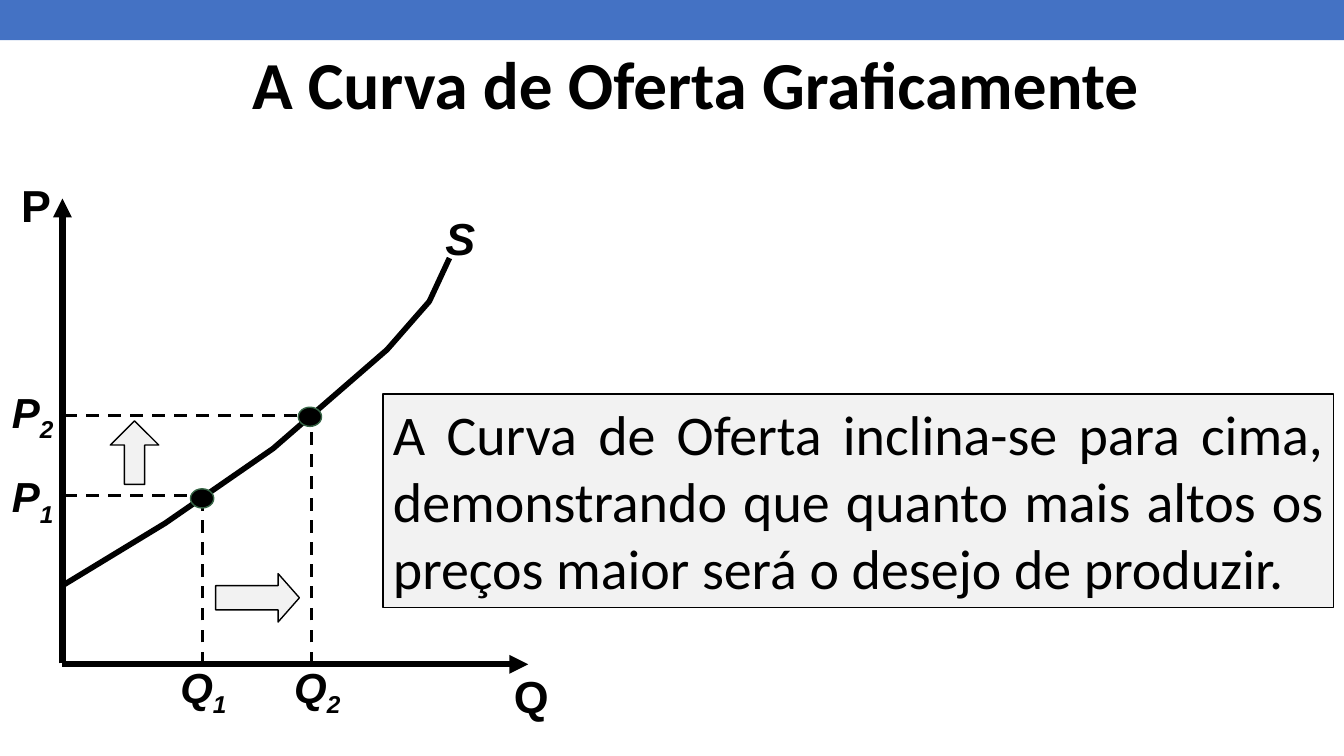
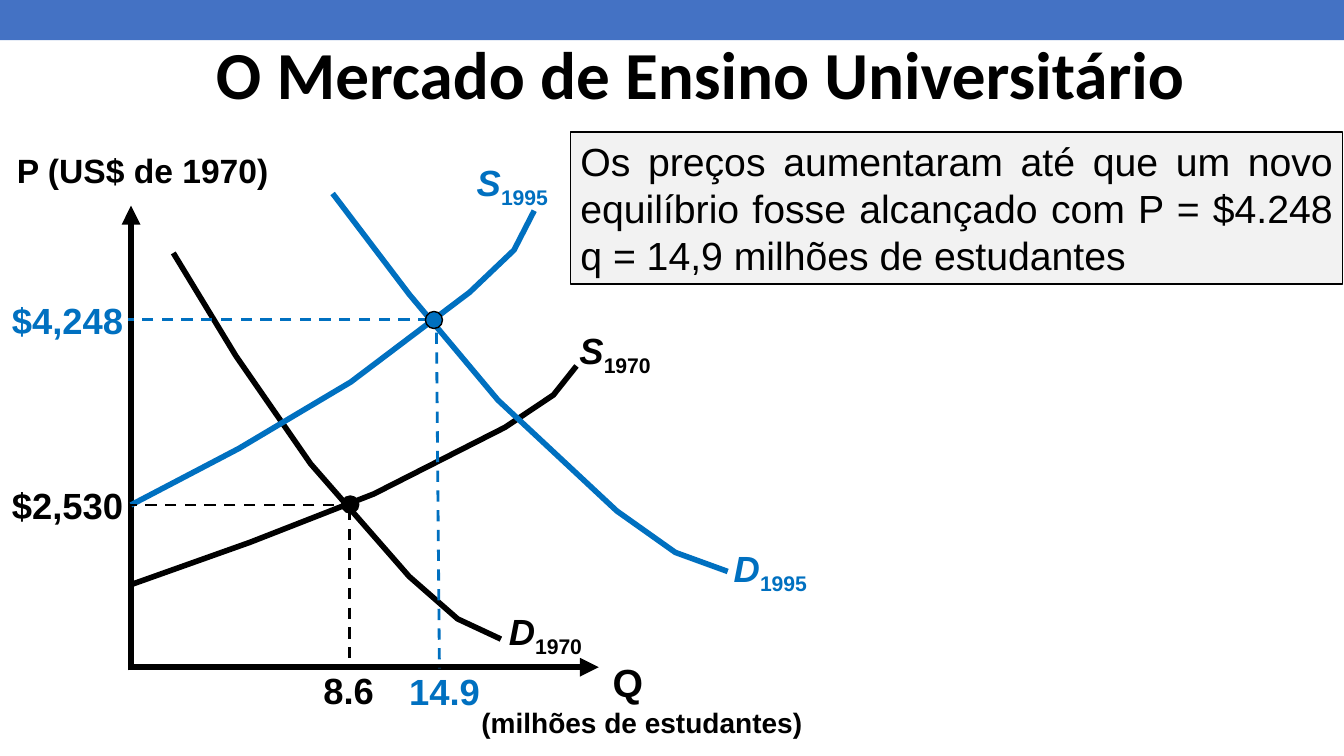
from lxml.etree import SubElement
from pptx import Presentation
from pptx.dml.color import RGBColor
from pptx.enum.dml import MSO_LINE
from pptx.enum.shapes import MSO_CONNECTOR, MSO_SHAPE
from pptx.enum.text import MSO_ANCHOR, MSO_AUTO_SIZE, PP_ALIGN
from pptx.oxml.ns import qn
from pptx.util import Pt

BLACK = RGBColor(0x00, 0x00, 0x00)
BLUE = RGBColor(0x00, 0x70, 0xC0)
BAND_BLUE = RGBColor(0x44, 0x72, 0xC4)
DOT_GREEN = RGBColor(0x37, 0x65, 0x46)
LIGHT_GRAY = RGBColor(0xF2, 0xF2, 0xF2)

SLIDE_WIDTH, SLIDE_HEIGHT = 960, 540


# Text
def add_run(paragraph, text, size, color=BLACK, font="Arial", bold=True,
            italic=False, subscript=False):
    run = paragraph.add_run()
    run.text = text
    run.font.name = font
    run.font.size = Pt(size)
    run.font.bold = bold
    run.font.italic = italic
    run.font.color.rgb = color
    if subscript:
        run.font._element.set("baseline", "-25000")


def add_text_box(slide, left, top, width, height, wrap=False):
    shape = slide.shapes.add_textbox(Pt(left), Pt(top), Pt(width), Pt(height))
    shape.text_frame.word_wrap = wrap
    return shape.text_frame


def add_label(slide, text, left, top, width, size, color=BLACK,
              subscript="", italic_subscript=False):
    """A bold label; a label with a subscript has an italic letter."""
    frame = add_text_box(slide, left, top, width, size * 1.15 + 7.2)
    frame.auto_size = MSO_AUTO_SIZE.SHAPE_TO_FIT_TEXT
    paragraph = frame.paragraphs[0]
    add_run(paragraph, text, size, color, italic=bool(subscript))
    if subscript:
        add_run(paragraph, subscript, size, color,
                italic=italic_subscript, subscript=True)


# Shapes and lines
def add_shape(slide, kind, left, top, width, height, fill, line=None):
    shape = slide.shapes.add_shape(kind, Pt(left), Pt(top), Pt(width), Pt(height))
    shape.shadow.inherit = False
    shape.fill.solid()
    shape.fill.fore_color.rgb = fill
    if line is None:
        shape.line.fill.background()
    else:
        shape.line.color.rgb = line
        shape.line.width = Pt(1)
    return shape


def add_line(slide, start, end, width, color=BLACK, dashed=False, arrow=False):
    connector = slide.shapes.add_connector(
        MSO_CONNECTOR.STRAIGHT, *(Pt(value) for value in (*start, *end)))
    connector.line.color.rgb = color
    connector.line.width = Pt(width)
    if dashed:
        connector.line.dash_style = MSO_LINE.DASH
    properties = connector._element.spPr
    if arrow:
        SubElement(properties.find(qn("a:ln")), qn("a:tailEnd"), type="triangle")
    SubElement(properties, qn("a:effectLst"))


def add_curve(slide, points, color=BLACK):
    start, *others = [(Pt(x), Pt(y)) for x, y in points]
    builder = slide.shapes.build_freeform(*start)
    builder.add_line_segments(others, close=False)
    curve = builder.convert_to_shape()
    curve.shadow.inherit = False
    curve.fill.background()
    curve.line.color.rgb = color
    curve.line.width = Pt(4)


def add_axes(slide, vertical, horizontal):
    for start, end in (vertical, horizontal):
        add_line(slide, start, end, 4.5, arrow=True)


def add_equilibrium(slide, guides, dot, dot_size, guide_width,
                    color=BLACK, outline=BLACK):
    """Dashed guides to both axes, with a dot where they meet."""
    for start, end in guides:
        add_line(slide, start, end, guide_width, color, dashed=True)
    (x, y), (width, height) = dot, dot_size
    add_shape(slide, MSO_SHAPE.OVAL, x - width / 2, y - height / 2,
              width, height, color, outline)


def add_arrow(slide, kind, left, top, width, height, adjustments):
    arrow = add_shape(slide, kind, left, top, width, height, LIGHT_GRAY, BLACK)
    for index, value in enumerate(adjustments):
        arrow.adjustments[index] = value


def add_note(slide, lines, left, top, width, height, size, font):
    note = add_shape(slide, MSO_SHAPE.RECTANGLE, left, top, width, height,
                     LIGHT_GRAY, BLACK)
    frame = note.text_frame
    frame.word_wrap = True
    frame.vertical_anchor = MSO_ANCHOR.TOP
    paragraph = frame.paragraphs[0]
    paragraph.alignment = PP_ALIGN.JUSTIFY
    for index, line in enumerate(lines):
        if index:
            paragraph.add_line_break()
        add_run(paragraph, line, size, font=font, bold=False)


# Frame shared by the slides
def add_slide(presentation, title, center, top):
    slide = presentation.slides.add_slide(presentation.slide_layouts[6])
    add_shape(slide, MSO_SHAPE.RECTANGLE, 0, 0, SLIDE_WIDTH, 28.8, BAND_BLUE)
    width = 760
    frame = add_text_box(slide, center - width / 2, top, width, 63, wrap=True)
    frame.vertical_anchor = MSO_ANCHOR.BOTTOM
    paragraph = frame.paragraphs[0]
    paragraph.alignment = PP_ALIGN.CENTER
    add_run(paragraph, title, 48, font="Calibri")
    return slide


def build_supply_curve(presentation):
    slide = add_slide(presentation, "A Curva de Oferta Graficamente", 496.8, 28.5)

    # Supply curve and explanation
    add_curve(slide, [(44.6, 418.3), (118.1, 373.7), (195.1, 320.4),
                      (276.5, 249.8), (306.7, 215.3), (321.1, 184.3)])
    frame = add_text_box(slide, 311, 147, 36, 46)
    add_run(frame.paragraphs[0], "S", 32, italic=True)
    add_note(slide, ["A Curva de Oferta inclina-se para cima, demonstrando que "
                     "quanto mais altos os preços maior será o desejo de produzir."],
             273.6, 281.5, 679, 152.6, 40, "Calibri")

    # Axes
    bottom, left = 474.5, 46.1
    add_axes(slide, ((44.6, 473.8), (44.6, 141.8)),
             ((44.6, bottom), (377.3, bottom)))
    add_label(slide, "Q", 360, 473.8, 47.5, 32)
    add_label(slide, "P", 8, 123.5, 36, 32)

    # Two points on the curve
    for number, x, y, right, top, dot, price_top, quantity_left in (
            ("1", 144.7, 354.2, 149.8, 356.4, (144.4, 356), 332.6, 121.7),
            ("2", 222.5, 296.6, 226, 294.5, (221.4, 297.7), 272.2, 203)):
        guides = [((left, y), (right, y)), ((x, bottom), (x, top))]
        add_equilibrium(slide, guides, dot, (16.6, 13.7), 2.25, outline=DOT_GREEN)
        add_label(slide, "P", 1.4, price_top, 46, 30,
                  subscript=number, italic_subscript=True)
        add_label(slide, "Q", quantity_left, 468.7, 49, 30,
                  subscript=number, italic_subscript=True)

    # Direction of the change
    add_arrow(slide, MSO_SHAPE.RIGHT_ARROW, 154.1, 409.7, 59.8, 34.6, (0.5, 0.44))
    add_arrow(slide, MSO_SHAPE.UP_ARROW, 78.8, 300.6, 34.6, 45.4, (0.42, 0.5))


def build_university_market(presentation):
    slide = add_slide(presentation, "O Mercado de Ensino Universitário", 500.4, 21.5)

    # Axes and their titles
    add_axes(slide, ((93.6, 478.8), (93.6, 146.9)),
             ((95, 476.6), (427.7, 476.6)))
    frame = add_text_box(slide, 316.8, 466.6, 263.5, 65.5, wrap=True)
    quantity, unit = frame.paragraphs[0], frame.add_paragraph()
    quantity.alignment, unit.alignment = PP_ALIGN.CENTER, PP_ALIGN.RIGHT
    add_run(quantity, "Q", 28)
    add_run(unit, "(milhões de estudantes)", 20)
    add_label(slide, "P (US$ de 1970)", 5, 103.7, 194, 24)

    # Demand and supply curves
    for letter, year, color, label_left, label_top, points in (
            ("D", "1970", BLACK, 356.4, 431.3,
             [(123.8, 180.7), (168.5, 254.2), (221.8, 331.2),
              (292.3, 411.8), (326.9, 442.1), (357.8, 456.5)]),
            ("S", "1970", BLACK, 406.8, 231.1,
             [(93.6, 417.6), (178.6, 387.4), (267.1, 352.8),
              (360.7, 305.3), (395.3, 282.2), (411.8, 261.4)]),
            ("S", "1995", BLUE, 333.4, 110.9,
             [(93.6, 360.7), (170.6, 320.4), (250.6, 272.9),
              (335.5, 208.8), (367.2, 178.6), (381.6, 150.5)]),
            ("D", "1995", BLUE, 517, 386.6,
             [(237.6, 138.2), (292.3, 210.2), (355.7, 285.8),
              (440.6, 365), (482.4, 394.6), (519.8, 408.2)])):
        add_curve(slide, points, color)
        add_label(slide, letter, label_left, label_top, 71, 26, color, subscript=year)

    # Equilibrium of each year
    for color, guides, dot, price, price_top, quantity, quantity_box in (
            (BLUE, [((311.8, 237.6), (313.9, 477.4)), ((306.7, 228.2), (91.4, 228.2))],
             (310, 228.6), "$4,248", 209.5, "14.9", (285.1, 474.5, 65.5)),
            (BLACK, [((249.8, 363.6), (249.8, 477.4)), ((252.7, 360.7), (91.4, 360.7))],
             (250.2, 360.4), "$2,530", 341.3, "8.6", (223.9, 473.8, 51))):
        add_equilibrium(slide, guides, dot, (12.2, 12.2), 2, color)
        add_label(slide, price, 1.4, price_top, 95, 26, color)
        add_label(slide, quantity, *quantity_box, 26, color)

    # Conclusion
    add_note(slide, ["Os preços aumentaram até que um novo equilíbrio fosse "
                     "alcançado com P = $4.248", "q = 14,9 milhões de estudantes"],
             407.5, 94.3, 551.5, 108.7, 28, "Arial")


def main():
    presentation = Presentation()
    presentation.slide_width = Pt(SLIDE_WIDTH)
    presentation.slide_height = Pt(SLIDE_HEIGHT)
    build_supply_curve(presentation)
    build_university_market(presentation)
    presentation.save("out.pptx")


if __name__ == "__main__":
    main()
